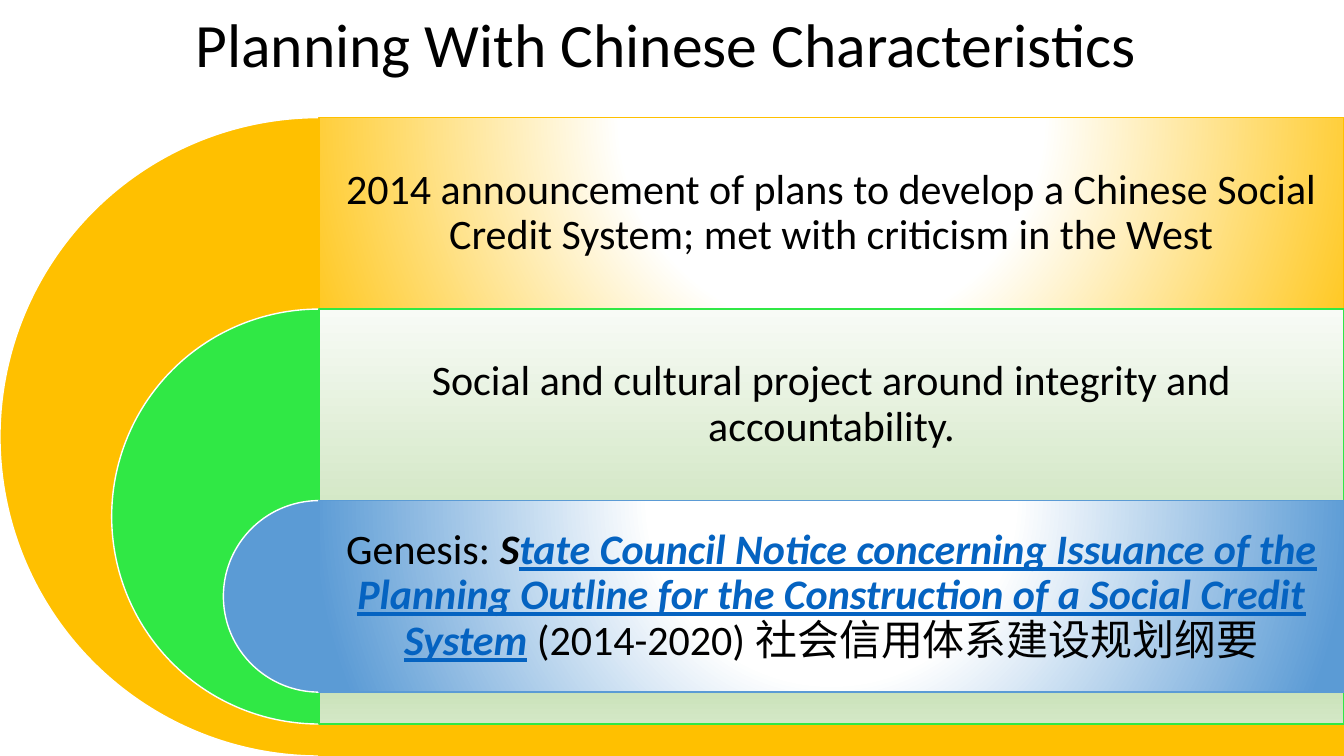
from dataclasses import dataclass

from pptx import Presentation
from pptx.dml.color import RGBColor
from pptx.enum.shapes import MSO_SHAPE
from pptx.enum.text import MSO_ANCHOR, PP_ALIGN
from pptx.oxml import parse_xml
from pptx.oxml.ns import nsdecls, qn
from pptx.util import Pt


@dataclass(frozen=True)
class Theme:
    font: str = "Calibri"
    title_size: int = 44
    body_size: int = 30
    text: str = "000000"
    link: str = "0563C1"
    outline: str = "FFFFFF"
    gold: str = "FFC000"
    green: str = "30E845"
    blue: str = "5B9BD5"
    pale_green: tuple = ((0, "F8FBF6"), (74, "BEDCAA"), (83, "BEDCAA"), (100, "D4E8C6"))


THEME = Theme()
LINEAR = '<a:lin ang="5400000" scaled="0"/>'
RADIAL = ('<a:path path="circle"><a:fillToRect l="50000" t="-80000" '
          'r="50000" b="180000"/></a:path>')


def glow(color):
    return (0, "FFFFFF"), (35, "FFFFFF"), (100, color)


# Each band: colour, gradient stops, gradient shape, text runs with their formats
BANDS = [
    (THEME.gold, glow(THEME.gold), RADIAL,
     [("2014 announcement of plans to develop a Chinese Social Credit System; "
       "met with criticism in the West", {})]),
    (THEME.green, THEME.pale_green, LINEAR,
     [("Social and cultural project around integrity and accountability.", {})]),
    (THEME.blue, glow(THEME.blue), RADIAL,
     [("Genesis: ", {}),
      ("S", {"bold": True, "italic": True}),
      ("tate Council Notice concerning Issuance of the Planning Outline for the "
       "Construction of a Social Credit System",
       {"bold": True, "italic": True, "underline": True, "color": THEME.link}),
      (" (2014-2020) 社会信用体系建设规划纲要", {})]),
]


def add_text(s, box, runs, size, inset):
    tf = s.shapes.add_textbox(*map(Pt, box)).text_frame
    frame_format = {"word_wrap": True, "vertical_anchor": MSO_ANCHOR.MIDDLE}
    frame_format |= {f"margin_{side}": Pt(inset) for side in ("left", "top", "right", "bottom")}
    for name, value in frame_format.items():
        setattr(tf, name, value)
    p = tf.paragraphs[0]
    p.alignment, p.line_spacing = PP_ALIGN.CENTER, 0.9
    for text, run_format in runs:
        r = p.add_run()
        r.text = text
        font_format = {"name": THEME.font, "size": Pt(size), **run_format}
        color = font_format.pop("color", THEME.text)
        for name, value in font_format.items():
            setattr(r.font, name, value)
        r.font.color.rgb = RGBColor.from_string(color)


def add_outlined(s, kind, box, line):
    sp = s.shapes.add_shape(kind, *map(Pt, box))
    sp.shadow.inherit = False
    sp.line.color.rgb = RGBColor.from_string(line)
    sp.line.width = Pt(1)
    return sp


def fill_gradient(sp, stops, direction):
    sp.fill.gradient()
    old = sp.fill._xPr.find(qn("a:gradFill"))
    stop_xml = "".join(f'<a:gs pos="{pos * 1000}"><a:srgbClr val="{color}"/></a:gs>'
                       for pos, color in stops)
    new = parse_xml(f'<a:gradFill {nsdecls("a")} rotWithShape="1">'
                    f'<a:gsLst>{stop_xml}</a:gsLst>{direction}</a:gradFill>')
    old.getparent().replace(old, new)


def add_title(s, box, text):
    add_text(s, box, [(text, {})], THEME.title_size, 4)


def add_nested_bands(s, box):
    """Stack half discs, each smaller than the last, with a band to the right of each."""
    left, top, width, height = box
    row = height * 0.3
    shrink = (height - row) / (len(BANDS) - 1)
    band_left = left + height / 2
    band_width = width - height / 2
    for i, (color, stops, direction, runs) in enumerate(BANDS):
        size = height - i * shrink
        y = top + i * row
        disc = add_outlined(s, MSO_SHAPE.PIE, (band_left - size / 2, y, size, size),
                            THEME.outline)
        disc.adjustments[0], disc.adjustments[1] = 54, 162
        disc.fill.solid()
        disc.fill.fore_color.rgb = RGBColor.from_string(color)
        band = add_outlined(s, MSO_SHAPE.RECTANGLE, (band_left, y, band_width, size), color)
        fill_gradient(band, stops, direction)
        add_text(s, (band_left, y, band_width, row), runs, THEME.body_size, 9)


def main():
    prs = Presentation()
    prs.slide_width, prs.slide_height = Pt(960), Pt(540)
    s = prs.slides.add_slide(prs.slide_layouts[6])
    add_title(s, (105, 0, 742, 68), "Planning With Chinese Characteristics")
    add_nested_bands(s, (0, 84, 960, 456))
    prs.save("out.pptx")


if __name__ == "__main__":
    main()
